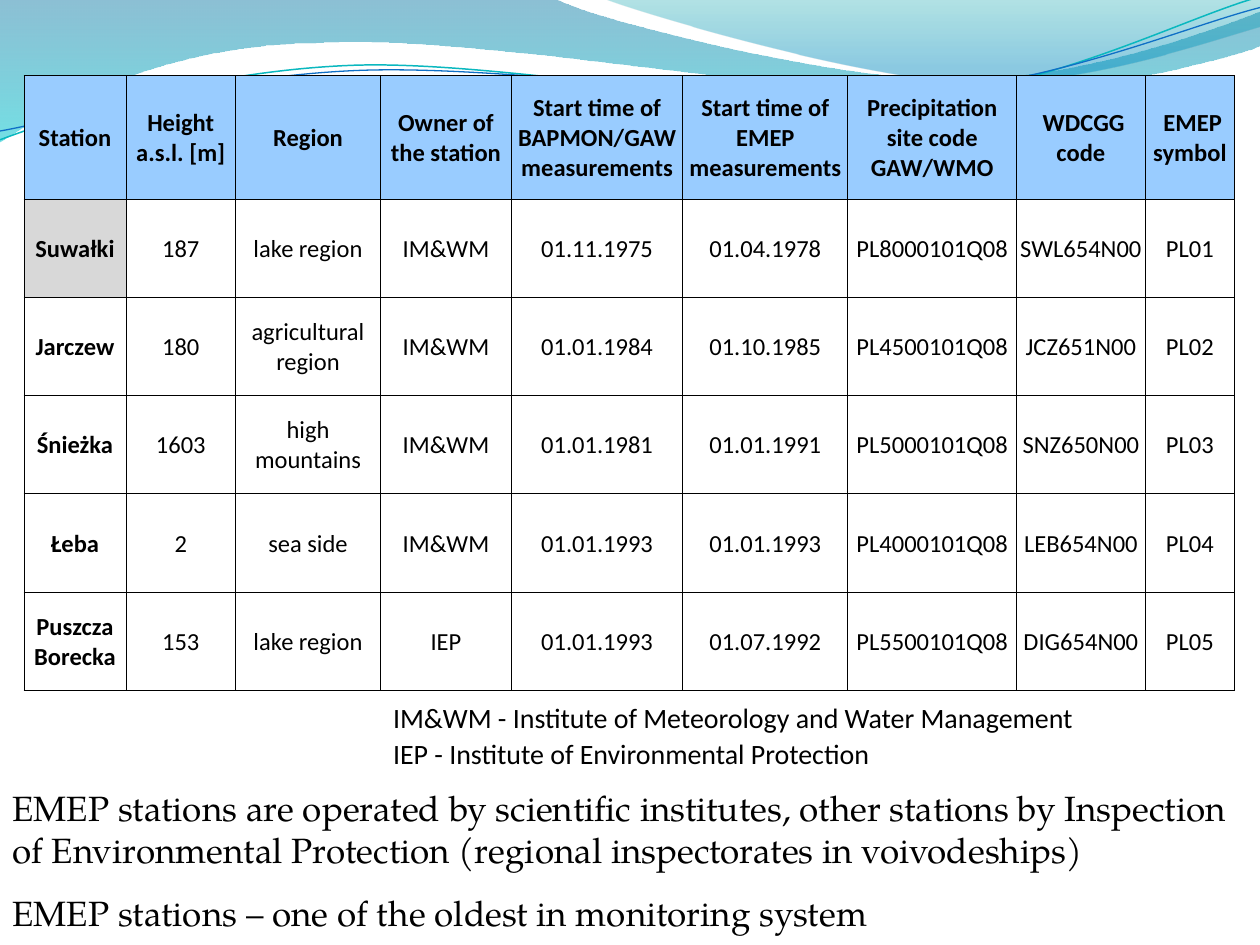
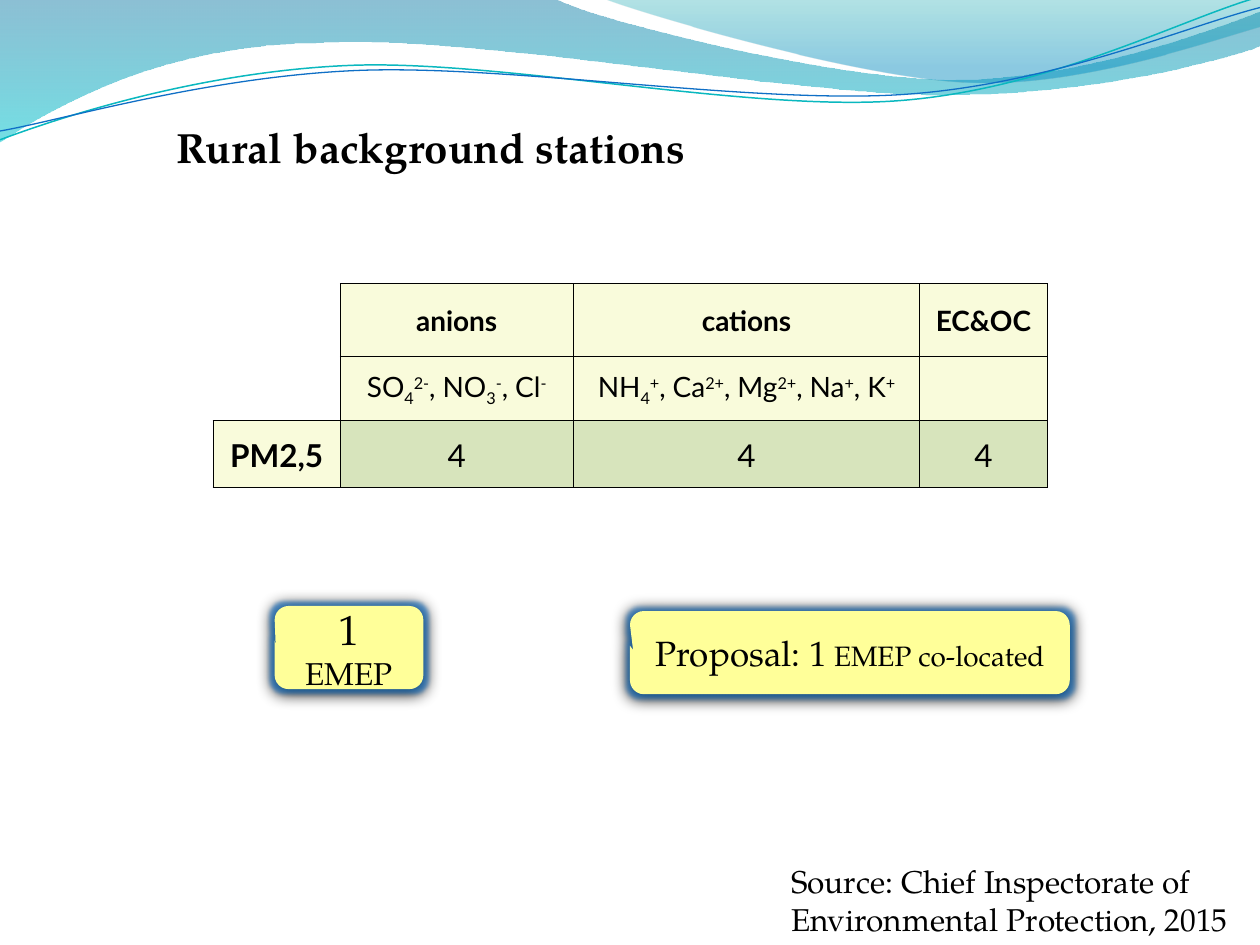
import pptx
import pptx.dml.color
import pptx.enum.shapes
import pptx.enum.text
import pptx.oxml
import pptx.oxml.ns
import pptx.util
from lxml import etree

Inches = pptx.util.Inches
Pt = pptx.util.Pt
RGB = pptx.dml.color.RGBColor.from_string
ALIGN = pptx.enum.text.PP_ALIGN
MIDDLE = pptx.enum.text.MSO_ANCHOR.MIDDLE
qn = pptx.oxml.ns.qn

COLORS = {
    "text": "000000",
    "header": "99CCFF",
    "highlight": "D8D8D8",
    "label": "F9FBDB",
    "count": "D7E4BC",
    "callout": "FFFF99",
    "shadow": "000000",
    "teal_line": "0AB8BF",
    "blue_line": "0F6FC6",
    "band_top": "0074A1",
    "band_bottom": "00C6CF",
    "corner_top": "00A1A9",
    "corner_bottom": "008BBF",
}
SERIF = "TeX Gyre Pagella"
NO_STYLE = "{2D5ABB26-0587-4C30-8999-92F81FD0307C}"


def write(para, spans, font, size, bold=False, align=ALIGN.LEFT):
    """Fill a paragraph; spans is a string or a list of (text, baseline in percent)."""
    para.alignment = align
    for text, baseline in [(spans, 0)] if isinstance(spans, str) else spans:
        span = para.add_run()
        span.text = text
        span.font.name = font
        span.font.size = Pt(size)
        span.font.bold = bold
        span.font.color.rgb = RGB(COLORS["text"])
        if baseline:
            span.font._element.set("baseline", str(baseline * 1000))


def add_grid(page, left, top, widths, heights, rows, font, look, align=ALIGN.CENTER):
    """Add a table; look(row, column) gives size, bold, fill colour name and bordered."""
    frame = page.shapes.add_table(
        len(rows), len(widths), Inches(left), Inches(top),
        Inches(sum(widths)), Inches(sum(heights)))
    table = frame.table
    table.first_row = table.horz_banding = False
    frame.element.find(".//" + qn("a:tableStyleId")).text = NO_STYLE
    for column, width in zip(table.columns, widths):
        column.width = Inches(width)
    for row, height in zip(table.rows, heights):
        row.height = Inches(height)
    for r, texts in enumerate(rows):
        for c, spans in enumerate(texts):
            cell = table.cell(r, c)
            size, bold, fill, bordered = look(r, c)
            cell.vertical_anchor = MIDDLE
            cell.margin_left = cell.margin_right = cell.margin_top = Inches(0.01)
            cell.margin_bottom = 0
            if spans:
                write(cell.text_frame.paragraphs[0], spans, font, size, bold, align)
            if fill:
                cell.fill.solid()
                cell.fill.fore_color.rgb = RGB(COLORS[fill])
            else:
                cell.fill.background()
            if bordered:
                properties = cell._tc.get_or_add_tcPr()
                for position, side in enumerate(("lnL", "lnR", "lnT", "lnB")):
                    edge = etree.Element(qn("a:" + side), w=str(Pt(0.5)))
                    solid = etree.SubElement(edge, qn("a:solidFill"))
                    etree.SubElement(solid, qn("a:srgbClr"), val=COLORS["text"])
                    properties.insert(position, edge)


deck = pptx.Presentation()
deck.slide_width = Inches(10)
deck.slide_height = Inches(7.5)
stations_page = deck.slides.add_slide(deck.slide_layouts[6])
rural_page = deck.slides.add_slide(deck.slide_layouts[5])

# Waves for the slide master: a two-number step is a line, a six-number step a Bézier curve
waves = [
    {"start": (0, -0.01),
     "steps": [(4.4, -0.01), (4.76, 0.17, 6.64, 0.63, 7.58, 0.63),
               (8.53, 0.63, 9.58, 0.26, 10, 0.09), (10.01, 0.36),
               (9.83, 0.44, 8.7, 0.76, 7.46, 0.75),
               (6.22, 0.75, 3.82, 0.28, 2.57, 0.34),
               (1.29, 0.35, 0.46, 0.83, -0.01, 1.13)],
     "stops": [(0, "band_top", 45), (1, "band_bottom", 55)]},
    {"start": (4.79, -0.01),
     "steps": [(5.09, 0.11, 6.82, 0.62, 7.69, 0.65),
               (8.56, 0.69, 9.61, 0.32, 10, 0.21), (10, 0)],
     "stops": [(0, "corner_top", 30), (0.8, "corner_bottom", 45)]},
    {"start": (0, 1.11),
     "steps": [(0.48, 0.93, 1.58, 0.57, 2.77, 0.52),
               (3.95, 0.47, 5.93, 0.89, 7.13, 0.8),
               (8.33, 0.71, 9.38, 0.15, 9.98, -0.02)],
     "line": ("teal_line", 0.85)},
    {"start": (0, 1.04),
     "steps": [(0.47, 0.96, 1.64, 0.61, 2.83, 0.56),
               (4.03, 0.51, 5.97, 0.83, 7.17, 0.75),
               (8.36, 0.67, 9.41, 0.21, 10, 0.06)],
     "line": ("blue_line", 0.75)},
]
UNITS = 1000  # path units per inch
for number, wave in enumerate(waves):
    start, *ends = [(round(x * UNITS), round(y * UNITS)) for x, y in
                    [wave["start"]] + [step[-2:] for step in wave["steps"]]]
    builder = stations_page.shapes.build_freeform(*start, scale=Inches(1) / UNITS)
    builder.add_line_segments(ends, close="stops" in wave)
    shape = builder.convert_to_shape()
    shape.shadow.inherit = False

    # Turn the segments that have control points into curves
    origin = [min(values) for values in zip(start, *ends)]
    segments = list(shape.element.spPr.iter(qn("a:lnTo")))
    for segment, step in zip(segments, wave["steps"]):
        if len(step) == 6:
            curve = etree.Element(qn("a:cubicBezTo"))
            for x, y in zip(step[::2], step[1::2]):
                etree.SubElement(curve, qn("a:pt"), x=str(round(x * UNITS) - origin[0]),
                                 y=str(round(y * UNITS) - origin[1]))
            segment.getparent().replace(segment, curve)

    if "stops" in wave:
        shape.line.fill.background()
        shape.fill.gradient()
        shape.fill.gradient_angle = 270
        for stop, (place, color, opacity) in zip(shape.fill.gradient_stops, wave["stops"]):
            stop.position = place
            stop.color.rgb = RGB(COLORS[color])
        for tint, (place, color, opacity) in zip(
                shape.element.spPr.iter(qn("a:srgbClr")), wave["stops"]):
            etree.SubElement(tint, qn("a:alpha"), val=str(opacity * 1000))
    else:
        color, weight = wave["line"]
        shape.fill.background()
        shape.line.color.rgb = RGB(COLORS[color])
        shape.line.width = Pt(weight)
    shape.element.nvSpPr.cNvPr.set("id", str(101 + number))
    deck.slide_master.element.cSld.spTree.insert(2 + number, shape.element)

# Slide 1: EMEP stations
stations = [
    ["Station", "Height a.s.l. [m]", "Region", "Owner of the station",
     "Start time of BAPMON/GAW measurements", "Start time of EMEP measurements",
     "Precipitation site code GAW/WMO", " WDCGG code", " EMEP symbol"],
    ["Suwałki", "187", "lake region", "IM&WM", "01.11.1975", "01.04.1978",
     "PL8000101Q08", "SWL654N00", "PL01"],
    ["Jarczew", "180", "agricultural region", "IM&WM", "01.01.1984", "01.10.1985",
     "PL4500101Q08", "JCZ651N00", "PL02"],
    ["Śnieżka", "1603", "high mountains", "IM&WM", "01.01.1981", "01.01.1991",
     "PL5000101Q08", "SNZ650N00", "PL03"],
    ["Łeba", "2", "sea side", "IM&WM", "01.01.1993", "01.01.1993",
     "PL4000101Q08", "LEB654N00", "PL04"],
    ["Puszcza Borecka", "153", "lake region", "IEP", "01.01.1993", "01.07.1992",
     "PL5500101Q08", "DIG654N00", "PL05"],
]
station_fills = {(1, 0): "highlight"}
add_grid(stations_page, 0.19, 0.6,
         [0.81, 0.87, 1.15, 1.04, 1.36, 1.31, 1.34, 1.02, 0.71], [0.98] + [0.78] * 5,
         stations, "Calibri",
         lambda r, c: (14, r == 0 or c == 0,
                       "header" if r == 0 else station_fills.get((r, c)), True))

abbreviations = [["IM&WM - Institute of Meteorology and Water Management"],
                 ["IEP - Institute of Environmental Protection"]]
add_grid(stations_page, 3.11, 5.56, [5.67], [0.28] * 2, abbreviations, "Calibri",
         lambda r, c: (16, False, None, False), ALIGN.LEFT)

remarks = stations_page.shapes.add_textbox(0, Inches(6.19), Inches(10), Inches(1.28)).text_frame
remarks.word_wrap = True
write(remarks.paragraphs[0],
      "EMEP stations are operated by scientific institutes, other stations by Inspection "
      "of Environmental Protection (regional inspectorates in voivodeships)", SERIF, 20)
second_remark = remarks.add_paragraph()
second_remark.space_before = Pt(12)
write(second_remark, "EMEP stations – one of the oldest in monitoring system", SERIF, 20)

# Slide 2: rural background stations
title = rural_page.shapes.title
title.left, title.top = Inches(1.3), Inches(0.91)
title.width, title.height = Inches(4.57), Inches(0.51)
write(title.text_frame.paragraphs[0], "Rural background stations", SERIF, 24, True)

source = rural_page.shapes.add_textbox(
    Inches(6.18), Inches(6.79), Inches(3.82), Inches(0.71)).text_frame
source.word_wrap = True
write(source.paragraphs[0],
      "Source: Chief Inspectorate of Environmental Protection, 2015", SERIF, 18)

anions = [("SO", 0), ("4", -25), ("2-", 30), (", NO", 0), ("3", -25), ("-", 30),
          (", Cl", 0), ("-", 30)]
cations = [("NH", 0), ("4", -25), ("+", 30), (", Ca", 0), ("2+", 30), (", Mg", 0),
           ("2+", 30), (", Na", 0), ("+", 30), (", K", 0), ("+", 30)]
ion_rows = [["", "anions", "cations", "EC&OC"],
            ["", anions, cations, ""],
            ["PM2,5", "4", "4", "4"]]
ion_fills = [[None] + ["label"] * 3, [None] + ["label"] * 3, ["label"] + ["count"] * 3]
add_grid(rural_page, 1.69, 2.25, [1.01, 1.85, 2.75, 1.01], [0.58, 0.51, 0.53],
         ion_rows, "Lato",
         lambda r, c: (18 if r == 2 else 16, r == 0 or c == 0,
                       ion_fills[r][c], ion_fills[r][c] is not None))

callouts = [
    (2.18, 4.81, 1.18, [("1", 24), (" EMEP", 18)]),
    (5, 4.85, 3.49, [("Proposal: 1", 20), (" EMEP co-located", 16)]),
]
for left, top, width, parts in callouts:
    callout = rural_page.shapes.add_shape(
        pptx.enum.shapes.MSO_SHAPE.ROUNDED_RECTANGULAR_CALLOUT,
        Inches(left), Inches(top), Inches(width), Inches(0.66))
    for index, value in enumerate((-0.493, -0.03, 0.167)):
        callout.adjustments[index] = value
    callout.fill.solid()
    callout.fill.fore_color.rgb = RGB(COLORS["callout"])
    callout.line.fill.background()
    callout.shadow.inherit = False
    effects = callout.element.spPr.find(qn("a:effectLst"))
    glow = etree.SubElement(effects, qn("a:glow"), rad=str(Pt(5)))
    glow_color = etree.SubElement(glow, qn("a:srgbClr"), val=COLORS["blue_line"])
    etree.SubElement(glow_color, qn("a:alpha"), val="60000")
    shadow = etree.SubElement(effects, qn("a:outerShdw"), blurRad=str(Pt(8.5)),
                              dist=str(Pt(1)), dir="5400000", rotWithShape="0")
    etree.SubElement(shadow, qn("a:srgbClr"), val=COLORS["shadow"])
    callout.text_frame.word_wrap = True
    callout.text_frame.vertical_anchor = MIDDLE
    for text, size in parts:
        write(callout.text_frame.paragraphs[0], text, SERIF, size, align=ALIGN.CENTER)

deck.save("out.pptx")
